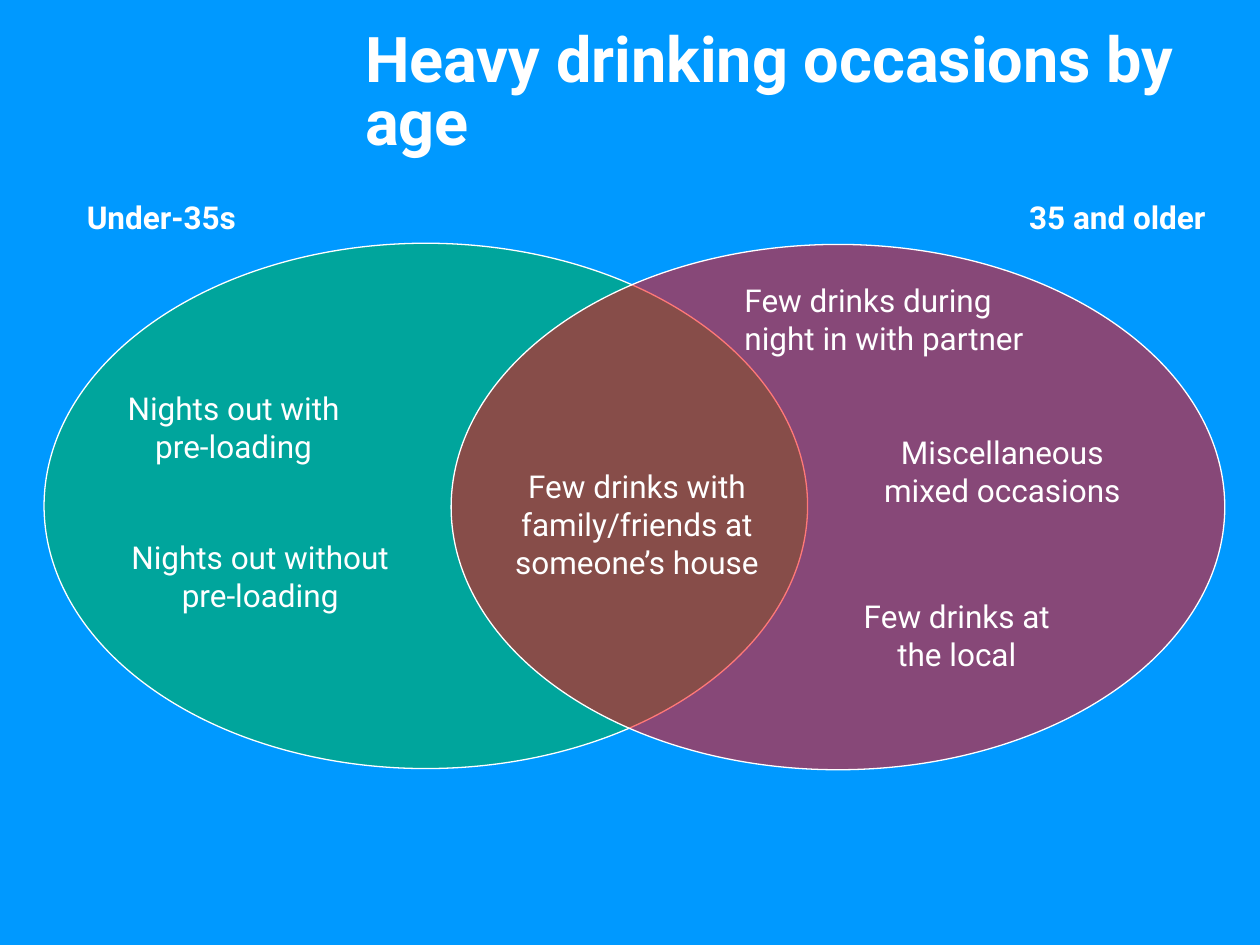
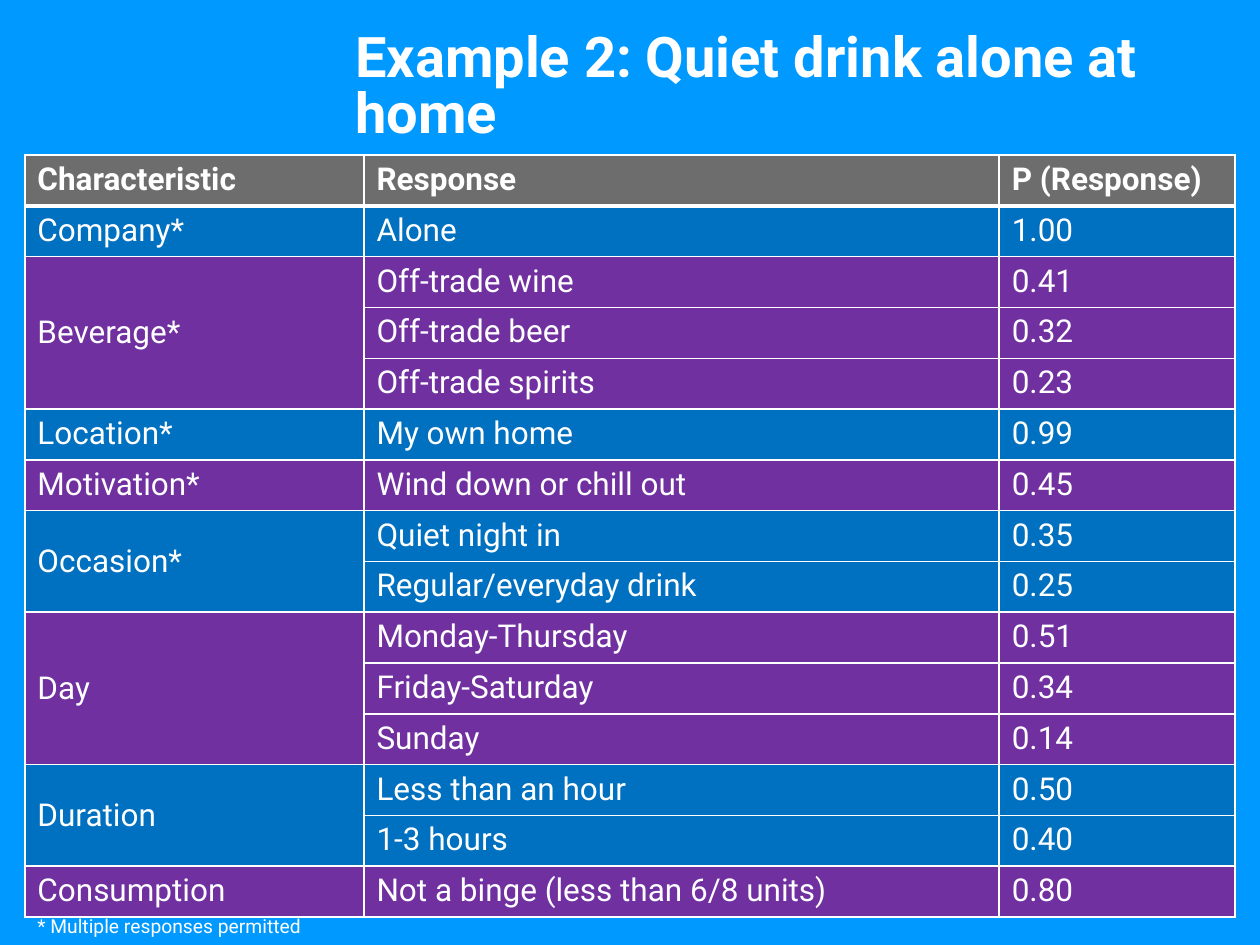
from dataclasses import dataclass

import pptx
import pptx.dml.color
import pptx.enum.shapes
import pptx.enum.text
import pptx.oxml
import pptx.oxml.ns
import pptx.util

Pt = pptx.util.Pt
ALIGN = pptx.enum.text.PP_ALIGN
ANCHOR = pptx.enum.text.MSO_ANCHOR


@dataclass(frozen=True)
class Theme:
    font: str = "Roboto"
    background: str = "0099FF"
    white: str = "FFFFFF"
    younger: str = "00B050"
    older: str = "FF0000"
    header: str = "6D6D6D"
    bands: tuple = ("0070C0", "7030A0")
    body_size: int = 18
    note_size: int = 11
    title_spacing: float = 0.83
    outline: float = 0.75
    grid: int = 1
    header_rule: int = 3


THEME = Theme()

# Venn labels: text, left, top, width, height, alignment
OCCASIONS = [
    ("Nights out with pre-loading", 65.5, 218.9, 136, 51, ALIGN.CENTER),
    ("Nights out without pre-loading", 65.5, 303.8, 166.3, 51, ALIGN.CENTER),
    ("Few drinks with family/friends at someone’s house",
     280.8, 263.5, 166.3, 73, ALIGN.CENTER),
    ("Miscellaneous mixed occasions", 489.6, 244.1, 166.3, 51, ALIGN.CENTER),
    ("Few drinks at the local", 478.8, 337.7, 136, 51, ALIGN.CENTER),
    ("Few drinks during night in with partner", 418.3, 157, 193, 51, ALIGN.LEFT),
]

# Table content: each characteristic with its responses
HEADINGS = ("Characteristic", "Response", "P (Response)")
CHARACTERISTICS = [
    ("Company*", [("Alone", "1.00")]),
    ("Beverage*", [("Off-trade wine", "0.41"), ("Off-trade beer", "0.32"),
                   ("Off-trade spirits", "0.23")]),
    ("Location*", [("My own home", "0.99")]),
    ("Motivation*", [("Wind down or chill out", "0.45")]),
    ("Occasion*", [("Quiet night in", "0.35"), ("Regular/everyday drink", "0.25")]),
    ("Day", [("Monday-Thursday", "0.51"), ("Friday-Saturday", "0.34"),
             ("Sunday", "0.14")]),
    ("Duration", [("Less than an hour", "0.50"), ("1-3 hours", "0.40")]),
    ("Consumption", [("Not a binge (less than 6/8 units)", "0.80")]),
]
COLUMN_WIDTHS = (193.8, 363, 134.8)
ROW_HEIGHT = 29.04


def rgb(color):
    return pptx.dml.color.RGBColor.from_string(color)


def set_attributes(target, values):
    for name, value in values.items():
        setattr(target, name, value)


def write(text_frame, text, size=THEME.body_size, bold=False, **paragraph_format):
    paragraph = text_frame.paragraphs[0]
    run = paragraph.add_run()
    run.text = text
    set_attributes(paragraph, paragraph_format)
    set_attributes(run.font, {"name": THEME.font, "size": Pt(size), "bold": bold})
    run.font.color.rgb = rgb(THEME.white)


def add_slide(presentation):
    slide = presentation.slides.add_slide(presentation.slide_layouts[6])
    slide.background.fill.solid()
    slide.background.fill.fore_color.rgb = rgb(THEME.background)
    return slide


def add_text(slide, text, left, top, width, height, grow=True, **text_format):
    shape = slide.shapes.add_textbox(Pt(left), Pt(top), Pt(width), Pt(height))
    sizing = pptx.enum.text.MSO_AUTO_SIZE
    set_attributes(shape.text_frame, {
        "word_wrap": True,
        "vertical_anchor": ANCHOR.TOP,
        "auto_size": sizing.SHAPE_TO_FIT_TEXT if grow else sizing.NONE,
    })
    write(shape.text_frame, text, **text_format)


def add_title(slide, text, left, width, size):
    add_text(slide, text, left, 15.1, width, 59.8, grow=False, size=size,
             bold=True, line_spacing=THEME.title_spacing)


def add_ellipse(slide, left, top, width, height, color, opacity):
    shape = slide.shapes.add_shape(pptx.enum.shapes.MSO_SHAPE.OVAL,
                                   Pt(left), Pt(top), Pt(width), Pt(height))
    shape.shadow.inherit = False
    shape.fill.solid()
    shape.fill.fore_color.rgb = rgb(color)
    color_element = shape.fill._xPr.find(".//" + pptx.oxml.ns.qn("a:srgbClr"))
    alpha = pptx.oxml.parse_xml(
        f'<a:alpha {pptx.oxml.ns.nsdecls("a")} val="{opacity * 1000}"/>')
    color_element.append(alpha)
    shape.line.color.rgb = rgb(THEME.white)
    shape.line.width = Pt(THEME.outline)


def set_borders(cell, top, bottom):
    sides = {"L": THEME.grid, "R": THEME.grid, "T": top, "B": bottom}
    for side, width in sides.items():
        border = pptx.oxml.parse_xml(
            f'<a:ln{side} {pptx.oxml.ns.nsdecls("a")} w="{Pt(width)}">'
            f'<a:solidFill><a:srgbClr val="{THEME.white}"/></a:solidFill>'
            f'</a:ln{side}>')
        cell._tc.get_or_add_tcPr().append(border)


def fill_row(table, row, texts, color, bold=False):
    for column, text in enumerate(texts):
        cell = table.cell(row, column)
        set_borders(cell,
                    top=THEME.header_rule if row == 1 else THEME.grid,
                    bottom=THEME.header_rule if row == 0 else THEME.grid)
        cell.fill.solid()
        cell.fill.fore_color.rgb = rgb(color)
        if text:
            write(cell.text_frame, text, bold=bold)


def add_response_table(slide, left, top):
    row_count = 1 + sum(len(responses) for _, responses in CHARACTERISTICS)
    table = slide.shapes.add_table(
        row_count, len(HEADINGS), Pt(left), Pt(top),
        Pt(sum(COLUMN_WIDTHS)), Pt(row_count * ROW_HEIGHT)).table
    set_attributes(table, {"first_row": False, "horz_banding": False})
    for column, width in zip(table.columns, COLUMN_WIDTHS):
        column.width = Pt(width)
    for table_row in table.rows:
        table_row.height = Pt(ROW_HEIGHT)

    fill_row(table, 0, HEADINGS, THEME.header, bold=True)
    row = 1
    for index, (characteristic, responses) in enumerate(CHARACTERISTICS):
        color = THEME.bands[index % 2]
        for offset, response in enumerate(responses):
            label = "" if offset else characteristic
            fill_row(table, row + offset, (label, *response), color)
        if len(responses) > 1:
            first = table.cell(row, 0)
            first.merge(table.cell(row + len(responses) - 1, 0))
            first.vertical_anchor = ANCHOR.MIDDLE
        row += len(responses)


def build_venn_slide(presentation):
    slide = add_slide(presentation)
    add_title(slide, "Heavy drinking occasions by age", 201.6, 493.2, 36)
    # Overlapping age groups
    add_ellipse(slide, 25.2, 139, 436.3, 300.2, THEME.younger, 56)
    add_ellipse(slide, 257.8, 139.7, 442.1, 300.2, THEME.older, 53)
    add_text(slide, "Under-35s", 42.5, 109.4, 215.3, 29, bold=True)
    add_text(slide, "35 and older", 581, 109.4, 136, 29, bold=True)
    # Occasion labels
    for text, left, top, width, height, alignment in OCCASIONS:
        add_text(slide, text, left, top, width, height, alignment=alignment)


def build_table_slide(presentation):
    slide = add_slide(presentation)
    add_title(slide, "Example 2: Quiet drink alone at home", 195.8, 504.7, 32)
    add_response_table(slide, 14.2, 88.6)
    add_text(slide, "* Multiple responses permitted", 14.2, 519.1, 442, 20.9,
             size=THEME.note_size)


def main():
    presentation = pptx.Presentation()
    presentation.slide_width, presentation.slide_height = Pt(720), Pt(540)
    build_venn_slide(presentation)
    build_table_slide(presentation)
    presentation.save("out.pptx")


if __name__ == "__main__":
    main()
